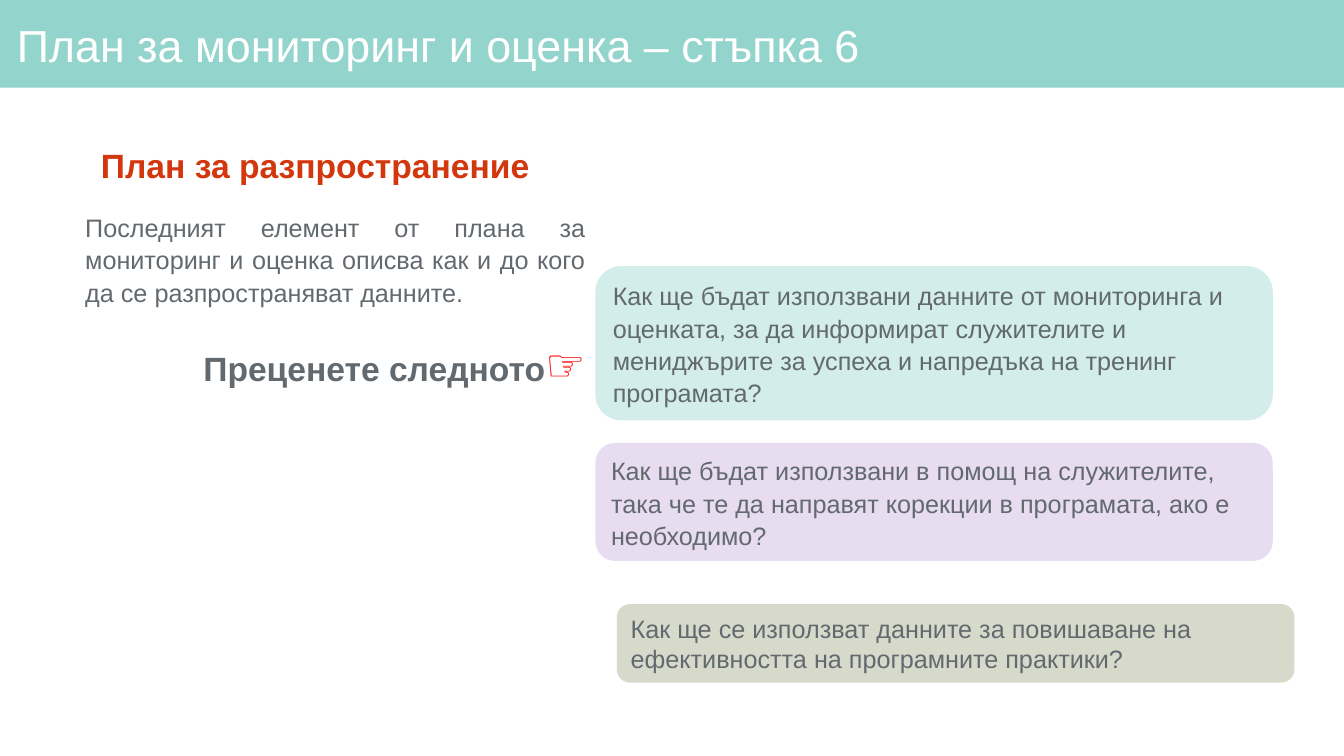
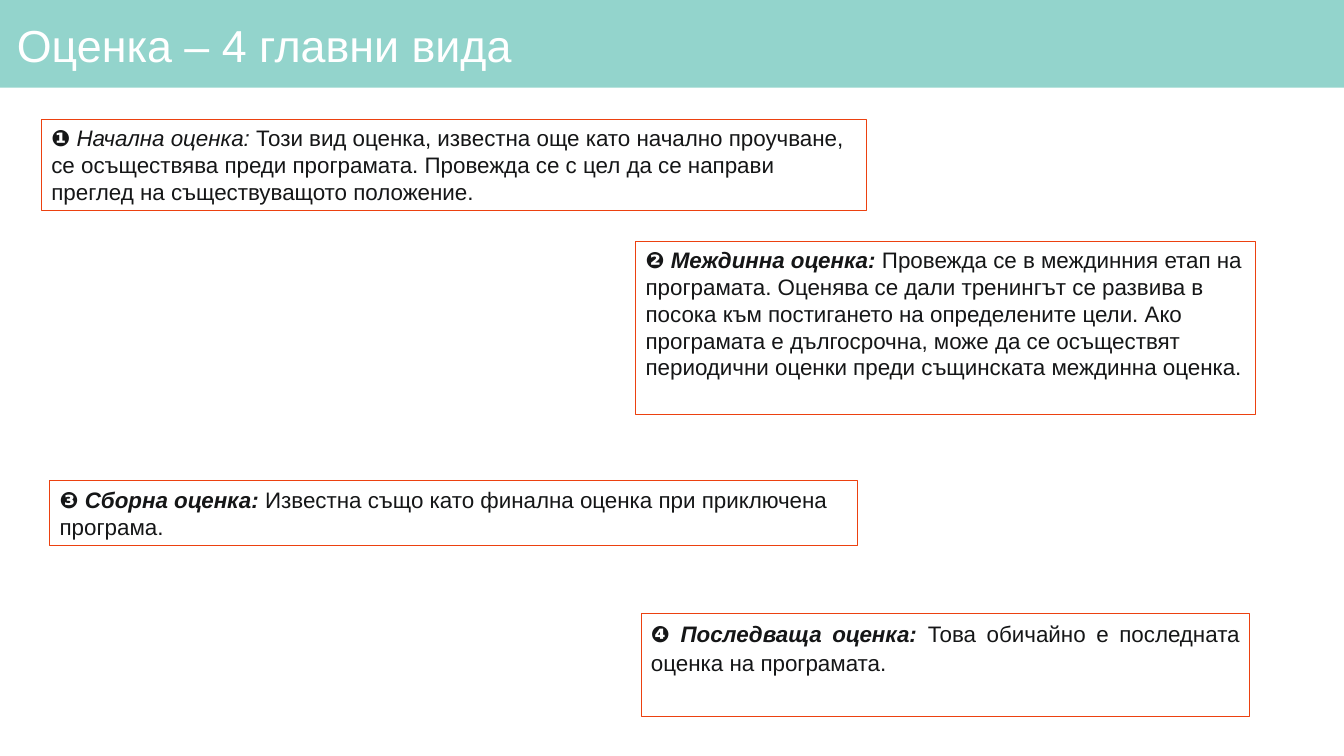
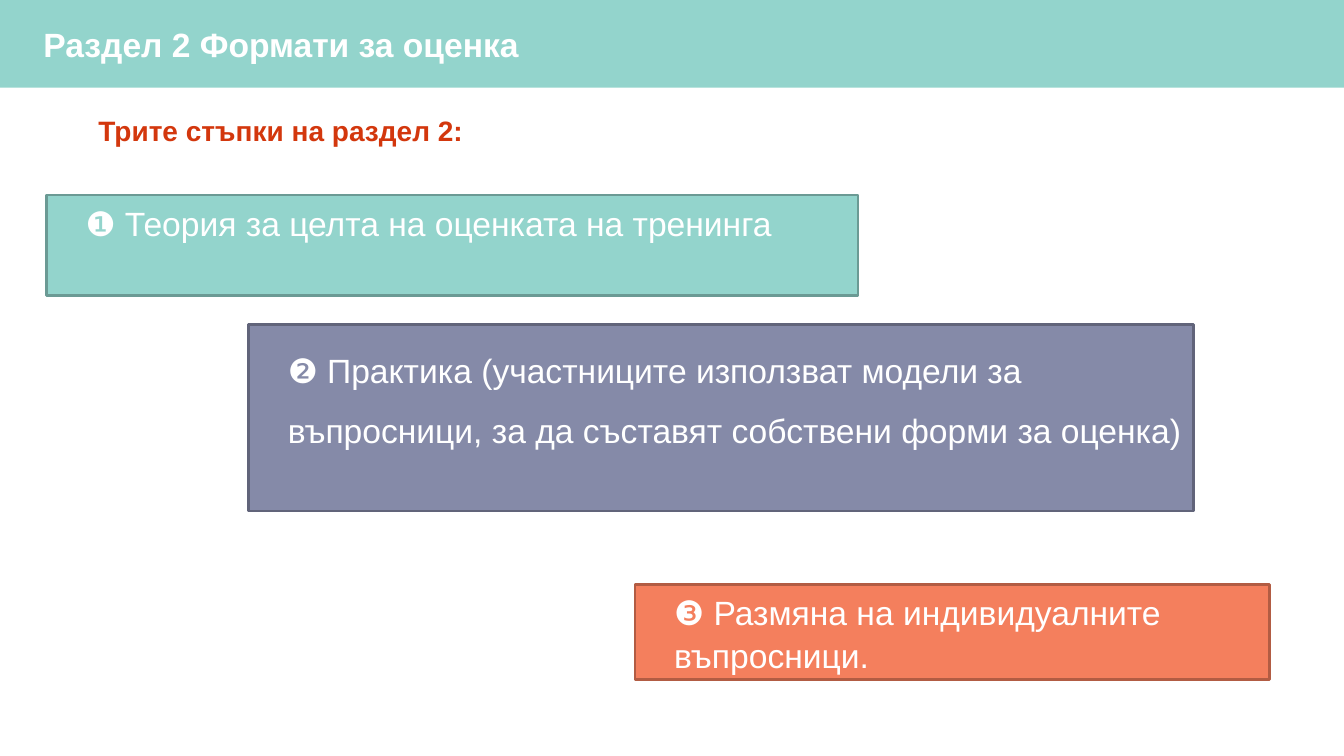
"""Build three slides on monitoring plans, evaluation types and evaluation formats."""
from pptx import Presentation
from pptx import util as u
from pptx.dml.color import RGBColor
from pptx.enum import shapes, text

WHITE, MINT, GREY, INK = "FFFFFF", "93D4CC", "636A6F", "151617"
HEADING, EDGE, POINTER = "D3370D", "EC4110", "FF0000"
RECT, ROUND = shapes.MSO_SHAPE.RECTANGLE, shapes.MSO_SHAPE.ROUNDED_RECTANGLE
LEFT, CENTER = text.PP_ALIGN.LEFT, text.PP_ALIGN.CENTER
RIGHT, JUSTIFY = text.PP_ALIGN.RIGHT, text.PP_ALIGN.JUSTIFY

deck = Presentation()
deck.slide_width, deck.slide_height = u.Inches(13.33), u.Inches(7.5)
column, row = deck.slide_width / 100, deck.slide_height / 100


def paint(part, colour):
    """Give a fill, a line's fill or a font one solid colour."""
    if hasattr(part, "solid"):
        part.solid()
        part.fore_color.rgb = RGBColor.from_string(colour)
    else:
        part.color.rgb = RGBColor.from_string(colour)


def box(slide, area, paragraphs, outline=RECT, fill=None, edge=None, weight=0.75,
        side=0.1, top=0.05, anchor=text.MSO_ANCHOR.TOP):
    """Place a box, its area in percent of the slide, and write its paragraphs."""
    left, upper, width, height = area
    place = [int(left * column), int(upper * row), int(width * column), int(height * row)]
    if fill or edge:
        panel = slide.shapes.add_shape(outline, *place)
        panel.shadow.inherit = False
        paint(panel.fill, fill) if fill else panel.fill.background()
        if edge:
            paint(panel.line, edge)
            panel.line.width = u.Pt(weight)
        else:
            panel.line.fill.background()
    else:
        panel = slide.shapes.add_textbox(*place)
    frame = panel.text_frame
    frame.word_wrap = True
    frame.vertical_anchor = anchor
    frame.margin_left = frame.margin_right = u.Inches(side)
    frame.margin_top = frame.margin_bottom = u.Inches(top)
    for number, (runs, style) in enumerate(paragraphs):
        paragraph = frame.add_paragraph() if number else frame.paragraphs[0]
        paragraph.alignment = style.get("align", LEFT)
        paragraph.line_spacing = style.get("spacing", 1.07)
        paragraph.space_before = u.Pt(style.get("before", 0))
        paragraph.space_after = u.Pt(style.get("after", 0))
        if "indent" in style:
            paragraph._p.get_or_add_pPr().set("marL", str(u.Inches(style["indent"])))
        paragraph.font.name = "Arial"
        paragraph.font.size = u.Pt(style["size"])
        paragraph.font.bold = style.get("bold", False)
        paint(paragraph.font, style["colour"])
        for words, changes in runs:
            run = paragraph.add_run()
            run.text = words
            for key, value in changes.items():
                if key == "colour":
                    paint(run.font, value)
                else:
                    setattr(run.font, key, value)


title_style = {"size": 32, "colour": WHITE, "spacing": 0.9}
title_layout = {"side": 0.06, "top": 0.06, "anchor": text.MSO_ANCHOR.MIDDLE}
section_style = {"size": 24, "colour": WHITE, "bold": True, "spacing": 1}
titles = [
    ("План за мониторинг и оценка – стъпка 6", (0.8, 1.2, 98, 10.4), title_style, title_layout),
    ("Оценка – 4 главни вида", (0.8, 1.2, 98, 10.4), title_style, title_layout),
    ("Раздел 2 Формати за оценка", (2.5, 2.5, 93.4, 6.7), section_style, {}),
]
pages = []
for title, area, style, layout in titles:
    page = deck.slides.add_slide(deck.slide_layouts[6])
    box(page, (0, 0, 100, 11.6), [], fill=MINT)
    box(page, area, [([(title, {})], style)], **layout)
    pages.append(page)
plan, kinds, formats = pages

box(plan, (2.6, 18.13, 41.7, 33.9), [
    ([("План за разпространение", {})],
     {"size": 24, "colour": HEADING, "bold": True, "align": CENTER, "before": 10}),
    ([("Последният елемент от плана за мониторинг и оценка описва как и до кого "
       "да се разпространяват данните.", {})],
     {"size": 18, "colour": GREY, "align": JUSTIFY, "before": 18, "indent": 0.4}),
    ([("Преценете следното", {}), ("☞", {"size": u.Pt(32), "colour": POINTER})],
     {"size": 24, "colour": GREY, "bold": True, "align": RIGHT, "before": 18, "indent": 0.4}),
])
questions = [
    ("Как ще бъдат използвани данните от мониторинга и оценката, за да информират служителите "
     "и мениджърите за успеха и напредъка на тренинг програмата?", 44.3, 35.2, 20.4, "D2EDEA", 1.07),
    ("Как ще бъдат използвани в помощ на служителите, така че те да направят корекции "
     "в програмата, ако е необходимо?", 44.3, 58.6, 15.6, "E7DCF0", 1.07),
    ("Как ще се използват данните за повишаване на ефективността на програмните практики?",
     45.9, 79.9, 10.4, "D7DACA", 1),
]
for question, left, upper, height, fill, spacing in questions:
    box(plan, (left, upper, 50.4, height),
        [([(question, {})], {"size": 18, "colour": GREY, "spacing": spacing})],
        outline=ROUND, fill=fill)

evaluations = [
    ("❶ ", "Начална оценка:", False,
     " Този вид оценка, известна още като начално проучване, се осъществява преди програмата. "
     "Провежда се с цел да се направи преглед на съществуващото положение.",
     (3.08, 15.75, 61.4, 12.15), {}),
    ("❷ ", "Междинна оценка:", True,
     " Провежда се в междинния етап на програмата. Оценява се дали тренингът се развива в посока "
     "към постигането на определените цели. Ако програмата е дългосрочна, може да се осъществят "
     "периодични оценки преди същинската междинна оценка.",
     (47.3, 31.9, 46.1, 22.9), {}),
    ("❸ ", "Сборна оценка:", True,
     " Известна също като финална оценка при приключена програма.",
     (3.7, 63.6, 60.1, 8.5), {}),
    ("❹ ", "Последваща оценка:", True,
     " Това обичайно е последната оценка на програмата.",
     (47.7, 81.1, 45.3, 13.7),
     {"align": JUSTIFY, "spacing": 1.07, "before": 10, "after": 8}),
]
for mark, kind, bold, meaning, area, style in evaluations:
    runs = [(mark, {"bold": True, "italic": True}), (kind, {"bold": bold, "italic": True}),
            (meaning, {})]
    box(kinds, area, [(runs, {"size": 16, "colour": INK, "spacing": 1, **style})], edge=EDGE)

box(formats, (4.4, 14.1, 50, 5.9),
    [([("Трите стъпки на раздел 2:", {})],
      {"size": 20, "colour": HEADING, "bold": True, "indent": 0.29})])
steps = [
    ("❶ Теория за целта на оценката на тренинга", (3.45, 25.8, 60.4, 13.3), MINT, "6B9A94",
     {"align": JUSTIFY, "before": 10, "after": 8}),
    ("❷ Практика (участниците използват модели за въпросници, за да съставят собствени "
     "форми за оценка)", (18.5, 42.9, 70.3, 24.7), "858AA8", "61647A", {"spacing": 1.5}),
    ("❸ Размяна на индивидуалните въпросници.", (47.25, 77.3, 47.2, 12.6), "F47F5D", "B25C43", {}),
]
for step, area, fill, edge, style in steps:
    box(formats, area, [([(step, {})], {"size": 24, "colour": WHITE, "indent": 0.29, **style})],
        fill=fill, edge=edge, weight=2)

deck.save("out.pptx")
